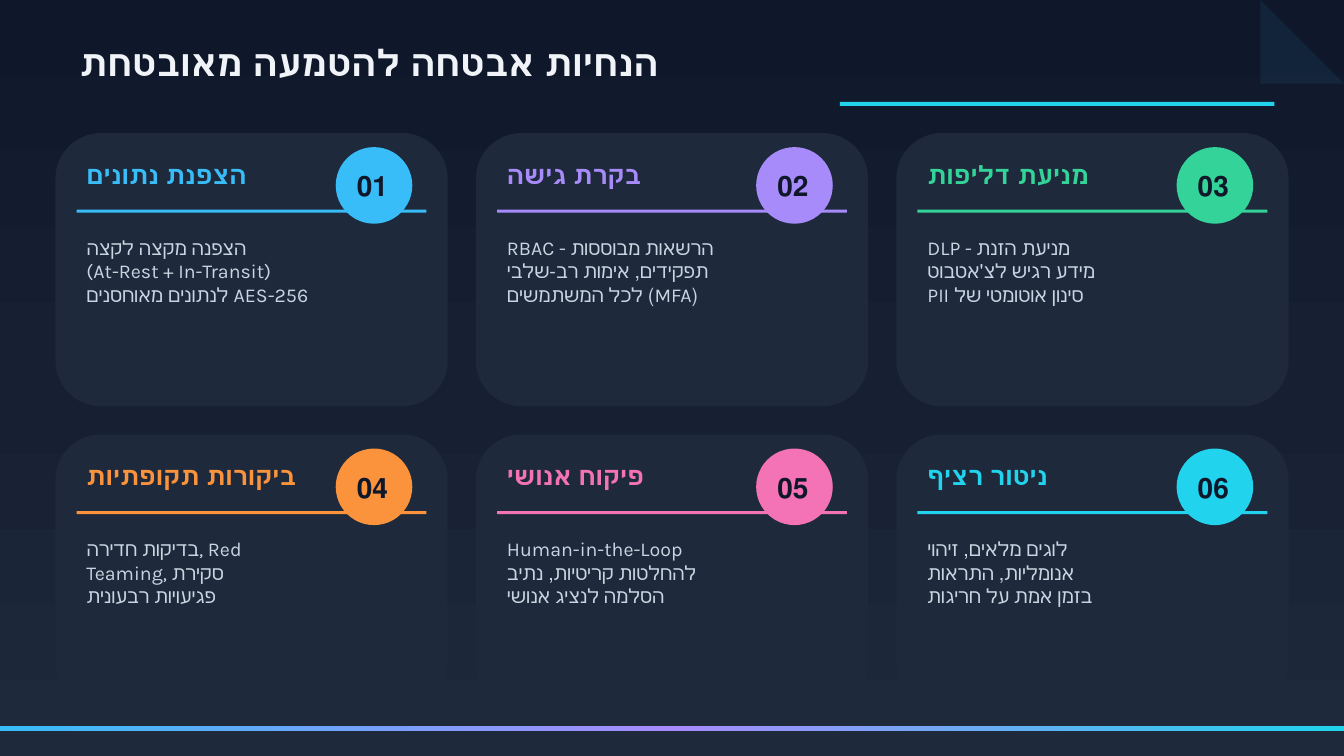
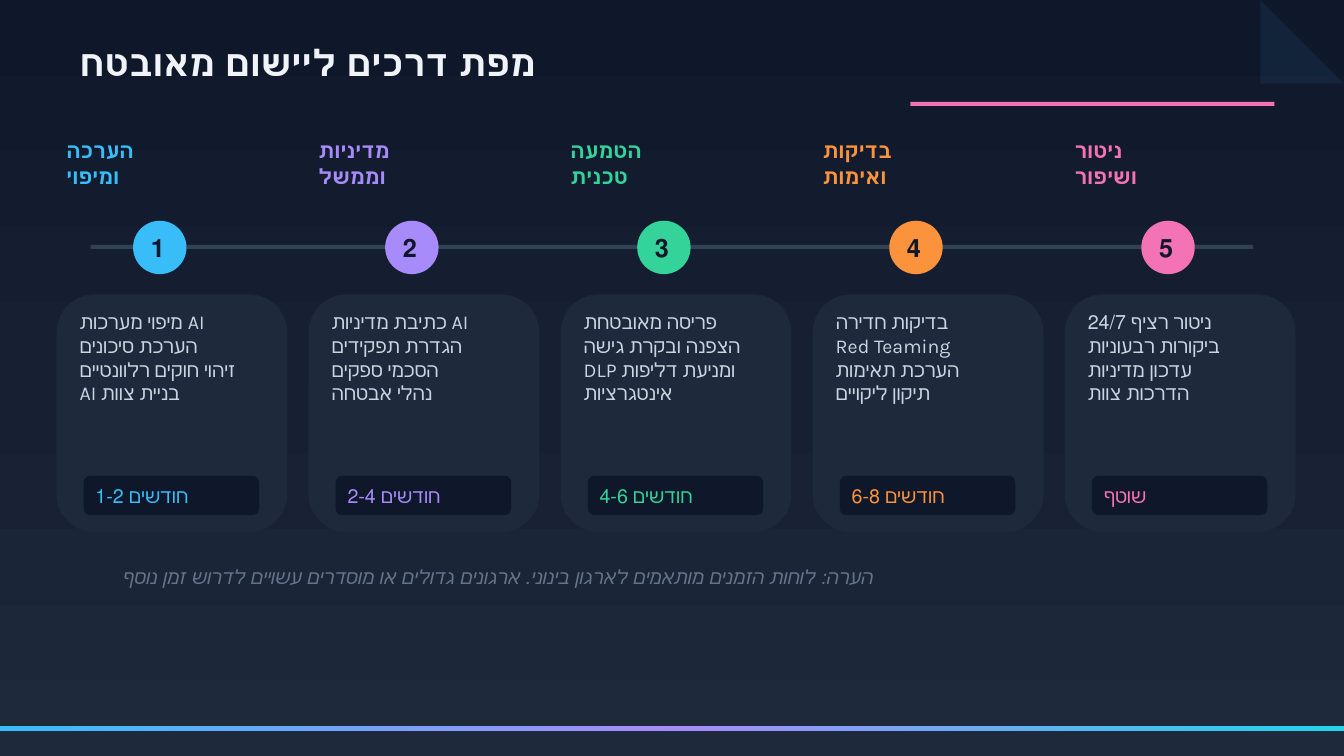
from copy import deepcopy

from lxml.etree import SubElement
from pptx import Presentation
from pptx.dml.color import RGBColor
from pptx.enum.shapes import MSO_SHAPE
from pptx.enum.text import MSO_ANCHOR, MSO_AUTO_SIZE, PP_ALIGN
from pptx.oxml.ns import qn
from pptx.util import Inches, Pt

FONT = "Karla"
NAVY, MIDNIGHT, SLATE = "0F172A", "162032", "1E293B"
WHITE, LIGHT, GREY, TRACK = "F0F4F8", "CBD5E1", "64748B", "334155"
SKY, VIOLET, GREEN = "38BDF8", "A78BFA", "34D399"
ORANGE, PINK, CYAN = "FB923C", "F472B6", "22D3EE"

WIDTH, HEIGHT = 13.33, 7.5
ACCENT_RIGHT = 12.64

GUIDELINES = [
    ("הצפנת נתונים", SKY,
     ["הצפנה מקצה לקצה", "(At-Rest + In-Transit)", "AES-256 לנתונים מאוחסנים"]),
    ("בקרת גישה", VIOLET,
     ["RBAC - הרשאות מבוססות", "תפקידים, אימות רב-שלבי", "(MFA) לכל המשתמשים"]),
    ("מניעת דליפות", GREEN,
     ["DLP - מניעת הזנת", "מידע רגיש לצ'אטבוט", "סינון אוטומטי של PII"]),
    ("ביקורות תקופתיות", ORANGE,
     ["בדיקות חדירה, Red", "Teaming, סקירת", "פגיעויות רבעונית"]),
    ("פיקוח אנושי", PINK,
     ["Human-in-the-Loop", "להחלטות קריטיות, נתיב", "הסלמה לנציג אנושי"]),
    ("ניטור רציף", CYAN,
     ["לוגים מלאים, זיהוי", "אנומליות, התראות", "בזמן אמת על חריגות"]),
]

PHASES = [
    (["הערכה", "ומיפוי"], SKY, "חודשים 1-2",
     ["מיפוי מערכות AI", "הערכת סיכונים", "זיהוי חוקים רלוונטיים", "בניית צוות AI"]),
    (["מדיניות", "וממשל"], VIOLET, "חודשים 2-4",
     ["כתיבת מדיניות AI", "הגדרת תפקידים", "הסכמי ספקים", "נהלי אבטחה"]),
    (["הטמעה", "טכנית"], GREEN, "חודשים 4-6",
     ["פריסה מאובטחת", "הצפנה ובקרת גישה", "DLP ומניעת דליפות", "אינטגרציות"]),
    (["בדיקות", "ואימות"], ORANGE, "חודשים 6-8",
     ["בדיקות חדירה", "Red Teaming", "הערכת תאימות", "תיקון ליקויים"]),
    (["ניטור", "ושיפור"], PINK, "שוטף",
     ["ניטור רציף 24/7", "ביקורות רבעוניות", "עדכון מדיניות", "הדרכות צוות"]),
]


def rgb(colour):
    return RGBColor.from_string(colour)


def write_lines(frame, lines, size, colour, bold=False, italic=False):
    """Write one paragraph per line; the closing line runs right to left."""
    for index, line in enumerate(lines):
        paragraph = frame.add_paragraph() if index else frame.paragraphs[0]
        paragraph.alignment = PP_ALIGN.LEFT
        if index == len(lines) - 1:
            paragraph._p.get_or_add_pPr().set("rtl", "1")
        run = paragraph.add_run()
        run.text = line
        run.font.name = FONT
        run.font.size = Pt(size)
        run.font.bold = bold
        run.font.italic = italic
        run.font.color.rgb = rgb(colour)


def add_text(slide, box, lines, size, colour, **style):
    frame = slide.shapes.add_textbox(*map(Inches, box)).text_frame
    frame.word_wrap = True
    write_lines(frame, lines, size, colour, **style)


def add_block(slide, preset, box, colour):
    block = slide.shapes.add_shape(preset, *map(Inches, box))
    block.shadow.inherit = False
    block.fill.solid()
    block.fill.fore_color.rgb = rgb(colour)
    block.line.fill.background()
    return block


def add_label(slide, preset, box, fill, text, size, colour, bold=False):
    """Add a filled shape holding one line of vertically centred text."""
    frame = add_block(slide, preset, box, fill).text_frame
    frame.word_wrap = False
    frame.vertical_anchor = MSO_ANCHOR.MIDDLE
    write_lines(frame, [text], size, colour, bold=bold)


def set_gradient(fill, holder, colours, angle):
    """Spread the three colours evenly over the fill of the holder element."""
    fill.gradient()
    fill.gradient_angle = angle
    stops = holder.find(".//" + qn("a:gsLst"))
    stops.append(deepcopy(stops[0]))
    for index, (stop, colour) in enumerate(zip(fill.gradient_stops, colours)):
        stop.color.rgb = rgb(colour)
        stop.position = index / (len(colours) - 1)


def decorate_master(prs, layout, slide):
    """Give the master its background, band and corner, and place the title."""
    master = prs.slide_master
    set_gradient(master.background.fill, master.element.cSld,
                 [NAVY, MIDNIGHT, SLATE], 270)

    band = add_block(slide, MSO_SHAPE.RECTANGLE, (0, 7.2, WIDTH, 0.05), SKY)
    set_gradient(band.fill, band.element, [SKY, VIOLET, CYAN], 0)
    corner = add_block(slide, MSO_SHAPE.RIGHT_TRIANGLE, (12.5, 0, 0.83, 0.83), SKY)
    tint = corner.element.spPr.find(qn("a:solidFill")).find(qn("a:srgbClr"))
    SubElement(tint, qn("a:alpha")).set("val", "8000")
    for part in (band, corner):
        master.element.cSld.spTree.append(part.element)

    title = layout.placeholders[0]
    title.left, title.top, title.width, title.height = map(
        Inches, (0.69, 0.35, 11.94, 0.62))
    title.text_frame.vertical_anchor = MSO_ANCHOR.TOP
    title.text_frame.auto_size = MSO_AUTO_SIZE.NONE
    title.text_frame.word_wrap = True


def add_heading(slide, text, accent, accent_width):
    write_lines(slide.shapes.title.text_frame, [text], 26, WHITE, bold=True)
    add_block(slide, MSO_SHAPE.RECTANGLE,
              (ACCENT_RIGHT - accent_width, 1.01, accent_width, 0.04), accent)


def add_guideline(slide, index, name, colour, details):
    row, column = divmod(index, 3)
    left, top = 0.55 + 4.17 * column, 1.32 + 2.99 * row
    inner = left + 0.21
    add_block(slide, MSO_SHAPE.ROUNDED_RECTANGLE, (left, top, 3.89, 2.71), SLATE)
    add_label(slide, MSO_SHAPE.OVAL, (left + 2.78, top + 0.14, 0.76, 0.76),
              colour, f"{index + 1:02}", 20, NAVY, bold=True)
    add_text(slide, (inner, top + 0.21, 2.5, 0.49), [name], 18, colour, bold=True)
    add_block(slide, MSO_SHAPE.RECTANGLE, (inner, top + 0.76, 3.47, 0.03), colour)
    add_text(slide, (inner, top + 0.97, 3.47, 1.53), details, 14, LIGHT)


def add_phase(slide, index, name, colour, months, tasks):
    left = 0.56 + 2.5 * index
    add_label(slide, MSO_SHAPE.OVAL, (left + 0.76, 2.19, 0.53, 0.53),
              colour, str(index + 1), 18, NAVY, bold=True)
    add_text(slide, (left, 1.32, 2.08, 0.76), name, 15, colour, bold=True)
    add_block(slide, MSO_SHAPE.ROUNDED_RECTANGLE, (left, 2.92, 2.29, 2.36), SLATE)
    add_text(slide, (left + 0.13, 3.03, 2.01, 1.39), tasks, 14, LIGHT)
    add_label(slide, MSO_SHAPE.ROUNDED_RECTANGLE, (left + 0.27, 4.72, 1.74, 0.39),
              NAVY, months, 14, colour)


def main():
    prs = Presentation()
    prs.slide_width, prs.slide_height = Inches(WIDTH), Inches(HEIGHT)
    layout = prs.slide_layouts[5]

    guidelines = prs.slides.add_slide(layout)
    decorate_master(prs, layout, guidelines)
    add_heading(guidelines, "הנחיות אבטחה להטמעה מאובטחת", CYAN, 4.31)
    for index, guideline in enumerate(GUIDELINES):
        add_guideline(guidelines, index, *guideline)

    roadmap = prs.slides.add_slide(layout)
    add_heading(roadmap, "מפת דרכים ליישום מאובטח", PINK, 3.61)
    add_block(roadmap, MSO_SHAPE.RECTANGLE, (0.9, 2.43, 11.53, 0.04), TRACK)
    for index, phase in enumerate(PHASES):
        add_phase(roadmap, index, *phase)
    add_text(roadmap, (1.11, 5.56, 11.11, 0.42),
             ["הערה: לוחות הזמנים מותאמים לארגון בינוני. "
              "ארגונים גדולים או מוסדרים עשויים לדרוש זמן נוסף"],
             14, GREY, italic=True)

    prs.save("out.pptx")


if __name__ == "__main__":
    main()
